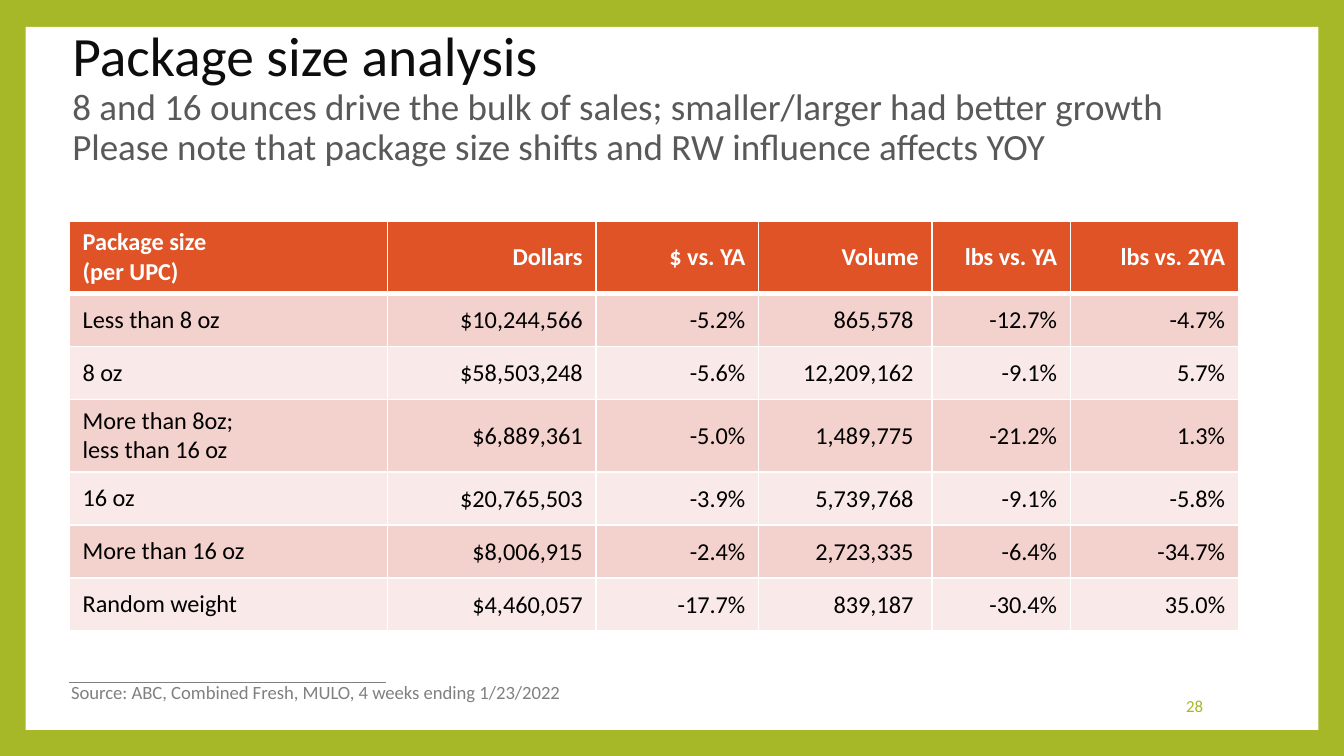
from lxml import etree
from pptx import Presentation
from pptx import util as u
from pptx.dml.color import RGBColor
from pptx.enum import shapes, text
from pptx.oxml import ns

WIDTH = u.Inches(10)
HEIGHT = WIDTH * 9 // 16
FONT = "Calibri"
GREEN, WHITE, ORANGE, GREY = "A6B727", "FFFFFF", "DF5327", "808080"
BANDS = ["F3D1CD", "F9E9E8"]
COLUMN_WEIGHTS = [2.37, 1.55, 1.21, 1.29, 1.03, 1.25]
LINE_WEIGHTS = {1: 11, 2: 15}
VOLUME_COLUMN = 3
ROWS = [
    ["Package size \n(per UPC)", "Dollars", "$ vs. YA", "Volume", "lbs vs. YA", "lbs vs. 2YA"],
    ["Less than 8 oz", "$10,244,566", "-5.2%", "865,578", "-12.7%", "-4.7%"],
    ["8 oz", "$58,503,248", "-5.6%", "12,209,162", "-9.1%", "5.7%"],
    ["More than 8oz; \nless than 16 oz", "$6,889,361", "-5.0%", "1,489,775", "-21.2%", "1.3%"],
    ["16 oz", "$20,765,503", "-3.9%", "5,739,768", "-9.1%", "-5.8%"],
    ["More than 16 oz", "$8,006,915", "-2.4%", "2,723,335", "-6.4%", "-34.7%"],
    ["Random weight", "$4,460,057", "-17.7%", "839,187", "-30.4%", "35.0%"],
]


def color(hex_string):
    """Turn a hex string into a colour."""
    return RGBColor.from_string(hex_string)


def percent_box(left, top, width, height):
    """Turn percentages of the slide's size into a box of lengths."""
    return (round(WIDTH * left / 100), round(HEIGHT * top / 100),
            round(WIDTH * width / 100), round(HEIGHT * height / 100))


def set_attributes(target, values):
    """Set each attribute of the target from a dict of values."""
    for name, value in values.items():
        setattr(target, name, value)


def fill_solid(target, hex_string):
    """Give the target a solid fill."""
    target.fill.solid()
    target.fill.fore_color.rgb = color(hex_string)


def write_lines(paragraph, lines, size, hex_string, bold=False):
    """Write lines of one format into a paragraph, parted by line breaks."""
    for line in lines:
        if paragraph.runs:
            paragraph.add_line_break()
        run = paragraph.add_run()
        run.text = line
        set_attributes(run.font, {"name": FONT, "size": u.Pt(size), "bold": bold})
        run.font.color.rgb = color(hex_string)


def add_text_area(slide, box, frame_format, paragraph_format):
    """Add a text box and return its formatted first paragraph."""
    frame = slide.shapes.add_textbox(*box).text_frame
    set_attributes(frame, frame_format)
    paragraph = frame.paragraphs[0]
    set_attributes(paragraph, paragraph_format)
    return paragraph


def add_panel(slide, box):
    """Put a white panel over the green background."""
    fill_solid(slide.background, GREEN)
    panel = slide.shapes.add_shape(shapes.MSO_SHAPE.RECTANGLE, *box)
    panel.shadow.inherit = False
    fill_solid(panel, WHITE)
    panel.line.fill.background()


def add_title(slide, box):
    """Write the title and its two lines of findings."""
    paragraph = add_text_area(
        slide, box, {"word_wrap": True, "vertical_anchor": text.MSO_ANCHOR.MIDDLE},
        {"line_spacing": 0.9})
    write_lines(paragraph, ["Package size analysis"], 29.7, "0D0D0D")
    write_lines(paragraph, [
        "8 and 16 ounces drive the bulk of sales; smaller/larger had better growth",
        "Please note that package size shifts and RW influence affects YOY",
    ], 19.8, "595959")


def add_borders(cell, bottom_width):
    """Draw white borders round a cell."""
    properties = cell._tc.get_or_add_tcPr()
    widths = {"a:lnL": 1, "a:lnR": 1, "a:lnT": 1, "a:lnB": bottom_width}
    for position, (tag, width) in enumerate(widths.items()):
        border = etree.Element(ns.qn(tag), w=str(u.Pt(width)))
        fill = etree.SubElement(border, ns.qn("a:solidFill"))
        etree.SubElement(fill, ns.qn("a:srgbClr"), val=WHITE)
        properties.insert(position, border)


def format_cell(cell, value, row, column):
    """Fill a cell and write its value by its place in the table."""
    is_header = row == 0
    fill_solid(cell, ORANGE if is_header else BANDS[(row - 1) % 2])
    cell.vertical_anchor = text.MSO_ANCHOR.MIDDLE
    if column and not is_header:
        right = 0.14 if column == VOLUME_COLUMN else 0.1
        set_attributes(cell, {
            "margin_left": u.Inches(0.01), "margin_top": u.Inches(0.01),
            "margin_right": u.Inches(right), "margin_bottom": 0})
    paragraph = cell.text_frame.paragraphs[0]
    paragraph.alignment = text.PP_ALIGN.RIGHT if column else text.PP_ALIGN.LEFT
    write_lines(paragraph, value.split("\n"), 13, WHITE if is_header else "000000", is_header)
    add_borders(cell, 3 if is_header else 1)


def add_sales_table(slide, box):
    """Place the sales table, sharing its box out by weights."""
    table = slide.shapes.add_table(len(ROWS), len(COLUMN_WEIGHTS), *box).table
    for column, weight in zip(table.columns, COLUMN_WEIGHTS):
        column.width = round(box[2] * weight / sum(COLUMN_WEIGHTS))
    row_weights = [LINE_WEIGHTS[len(values[0].split("\n"))] for values in ROWS]
    for row, weight in zip(table.rows, row_weights):
        row.height = round(box[3] * weight / sum(row_weights))
    for row, values in enumerate(ROWS):
        for column, value in enumerate(values):
            format_cell(table.cell(row, column), value, row, column)


def add_rule(slide, box):
    """Draw the thin rule above the source."""
    left, top, width, height = box
    rule = slide.shapes.add_connector(
        shapes.MSO_CONNECTOR.STRAIGHT, left, top, left + width, top + height)
    rule.line.color.rgb = color(GREY)
    rule.line.width = u.Pt(0.79)
    etree.SubElement(rule._element.spPr, ns.qn("a:effectLst"))


def add_source(slide, box):
    """Write the source of the figures."""
    paragraph = add_text_area(
        slide, box, {"word_wrap": False, "auto_size": text.MSO_AUTO_SIZE.SHAPE_TO_FIT_TEXT}, {})
    write_lines(paragraph, ["Source: ABC, Combined Fresh, MULO, 4 weeks ending 1/23/2022"], 10, GREY)


def add_page_number(slide, box):
    """Write the page number."""
    paragraph = add_text_area(
        slide, box, {"word_wrap": True, "vertical_anchor": text.MSO_ANCHOR.MIDDLE},
        {"alignment": text.PP_ALIGN.RIGHT})
    write_lines(paragraph, ["28"], 9, GREEN)


def main():
    """Build and save the slide."""
    presentation = Presentation()
    set_attributes(presentation, {"slide_width": WIDTH, "slide_height": HEIGHT})
    slide = presentation.slides.add_slide(presentation.slide_layouts[6])
    add_panel(slide, percent_box(1.9, 3.56, 96.2, 92.98))
    add_rule(slide, percent_box(5.1, 90.31, 23.6, 0))
    add_title(slide, percent_box(4.4, 6.04, 85.3, 14.04))
    add_page_number(slide, percent_box(76.5, 90.67, 14, 5.33))
    add_source(slide, percent_box(4.3, 89.24, 38.5, 4.8))
    add_sales_table(slide, percent_box(5.15, 29.24, 87, 54.22))
    presentation.save("out.pptx")


if __name__ == "__main__":
    main()
